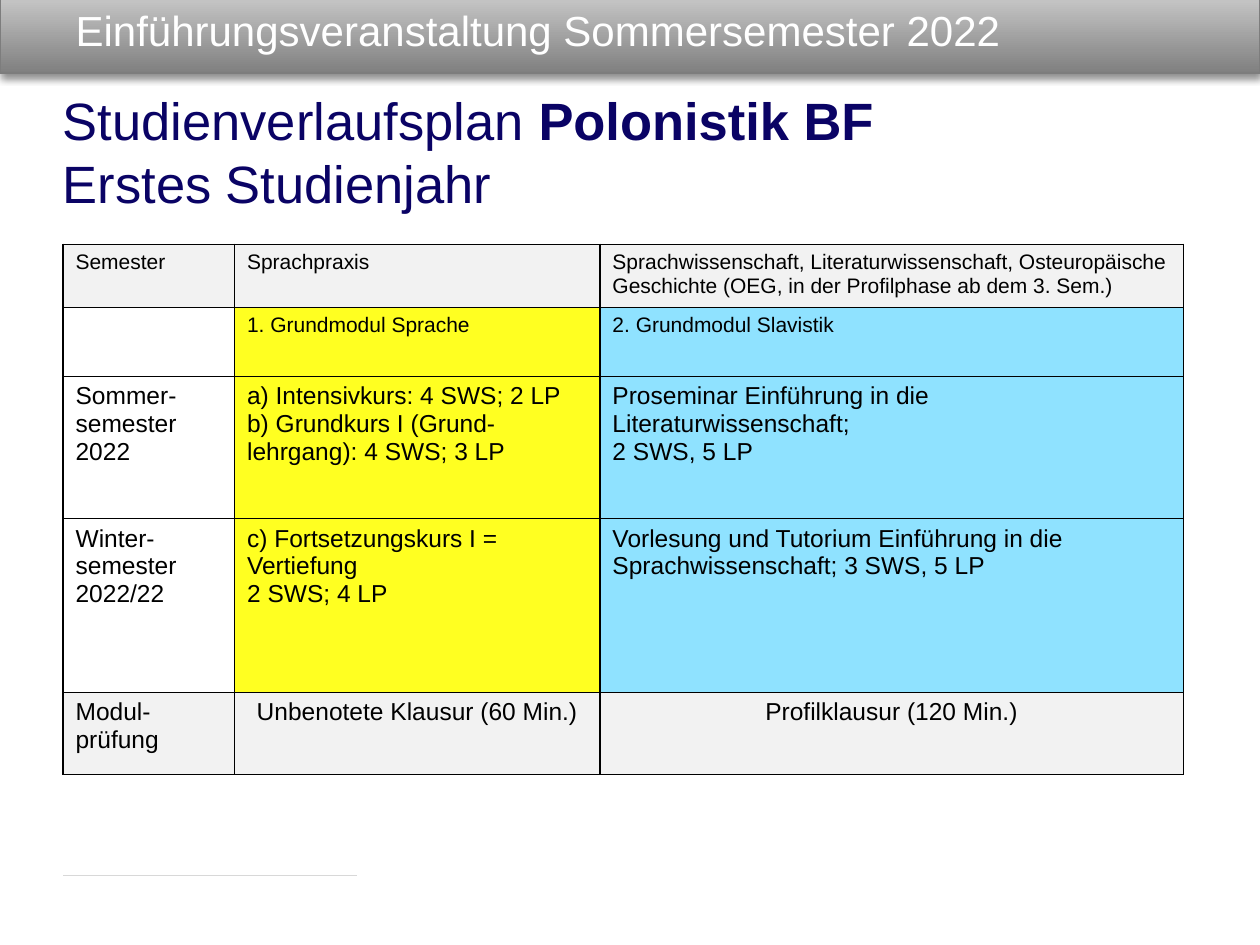
from lxml import etree
from pptx import Presentation
from pptx.dml.color import RGBColor
from pptx.enum.shapes import MSO_CONNECTOR as Connector, MSO_SHAPE as Shape
from pptx.enum.text import MSO_ANCHOR as Anchor, PP_ALIGN as Align
from pptx.oxml import parse_xml
from pptx.oxml.ns import nsdecls, qn
from pptx.util import Pt

BLACK = RGBColor(0x00, 0x00, 0x00)
WHITE = RGBColor(0xFF, 0xFF, 0xFF)
NAVY = RGBColor(0x0A, 0x03, 0x65)
DARK_GREY = RGBColor(0x80, 0x80, 0x80)
SILVER = RGBColor(0xCD, 0xCD, 0xCD)
EDGE_GREY = RGBColor(0x7D, 0x7D, 0x7D)
RULE_GREY = RGBColor(0xD8, 0xD8, 0xD8)
PALE_GREY = RGBColor(0xF2, 0xF2, 0xF2)
YELLOW = RGBColor(0xFF, 0xFF, 0x21)
SKY_BLUE = RGBColor(0x8F, 0xE2, 0xFF)


def set_font(font, color, **formats):
    font.color.rgb = color
    for name, value in {"name": "Arial", **formats}.items():
        setattr(font, name, value)


def add_borders(cell):
    properties = cell._tc.get_or_add_tcPr()
    for side in ("lnL", "lnR", "lnT", "lnB"):
        properties.append(parse_xml(
            f'<a:{side} {nsdecls("a")} w="{Pt(1)}"><a:solidFill>'
            f'<a:srgbClr val="{BLACK}"/></a:solidFill></a:{side}>'))


presentation = Presentation()
presentation.slide_width, presentation.slide_height = Pt(720), Pt(540)
slide = presentation.slides.add_slide(presentation.slide_layouts[5])

# Header bar with its title
title = slide.shapes.title
bar = slide.shapes.add_shape(Shape.RECTANGLE, Pt(0), Pt(-5.8), Pt(720), Pt(47.5))
title.element.addprevious(bar.element)
bar.fill.gradient()
bar.fill.gradient_angle = 90
for stop, position, color in zip(bar.fill.gradient_stops, (0, 1), (DARK_GREY, SILVER)):
    stop.position = position
    stop.color.rgb = color
bar.line.color.rgb = EDGE_GREY
bar.line.width = Pt(0.75)
bar.element.spPr.append(parse_xml(
    f'<a:effectLst {nsdecls("a")}>'
    f'<a:outerShdw blurRad="{Pt(4)}" dist="{Pt(3)}" dir="5400000" rotWithShape="0">'
    '<a:srgbClr val="000000"><a:alpha val="43000"/></a:srgbClr>'
    '</a:outerShdw></a:effectLst>'))

title.left, title.top, title.width, title.height = Pt(36), Pt(0), Pt(667.4), Pt(33.8)
title.text_frame.text = "Einführungsveranstaltung Sommersemester 2022"
title.text_frame.vertical_anchor = Anchor.MIDDLE
title_paragraph = title.text_frame.paragraphs[0]
title_paragraph.alignment = Align.LEFT
set_font(title_paragraph.runs[0].font, WHITE, size=Pt(24))

# Footer rule
rule = slide.shapes.add_connector(Connector.STRAIGHT, Pt(36), Pt(500.4), Pt(203.8), Pt(500.4))
rule.line.color.rgb = RULE_GREY
rule.line.width = Pt(0.75)
etree.SubElement(rule.element.spPr, qn("a:effectLst"))

# Heading
heading = slide.shapes.add_textbox(Pt(28.8), Pt(46.8), Pt(647.3), Pt(79.2))
heading.text_frame.word_wrap = True
paragraph = heading.text_frame.paragraphs[0]
paragraph.line_spacing = Pt(36)
for text, bold in (("Studienverlaufsplan ", False), ("Polonistik BF", True),
                   ("Erstes Studienjahr", False)):
    if text.startswith("Erstes"):
        paragraph.add_line_break()
    run = paragraph.add_run()
    run.text = text
    set_font(run.font, NAVY, size=Pt(30), bold=bold)

# Study plan: height, text size and cell texts of each row
plan_rows = [
    (36, 12, ["Semester", "Sprachpraxis",
              "Sprachwissenschaft, Literaturwissenschaft, Osteuropäische "
              "Geschichte (OEG, in der Profilphase ab dem 3. Sem.)"]),
    (39.4, 12, ["", "1. Grundmodul Sprache", "2. Grundmodul Slavistik"]),
    (81.2, 14, ["Sommer-semester 2022",
                "a) Intensivkurs: 4 SWS; 2 LP\nb) Grundkurs I (Grund-lehrgang): 4 SWS; 3 LP",
                "Proseminar Einführung in die Literaturwissenschaft;\n2 SWS, 5 LP"]),
    (99.4, 14, ["Winter-semester 2022/22",
                "c) Fortsetzungskurs I = Vertiefung\n2 SWS; 4 LP",
                "Vorlesung und Tutorium Einführung in die\nSprachwissenschaft; 3 SWS, 5 LP"]),
    (46.8, 14, ["Modul-prüfung", "Unbenotete Klausur (60 Min.)", "Profilklausur (120 Min.)"]),
]
column_widths = (98, 208.8, 333.4)
column_fills = (None, YELLOW, SKY_BLUE)
last_row = len(plan_rows) - 1

plan = slide.shapes.add_table(len(plan_rows), len(column_widths), Pt(36), Pt(139.7),
                              Pt(sum(column_widths)),
                              Pt(sum(row[0] for row in plan_rows))).table
plan.first_row = plan.horz_banding = False
for column, width in zip(plan.columns, column_widths):
    column.width = Pt(width)

for row_index, (height, size, texts) in enumerate(plan_rows):
    plan.rows[row_index].height = Pt(height)
    for column_index, text in enumerate(texts):
        cell = plan.cell(row_index, column_index)
        cell.text = text
        add_borders(cell)
        fill_color = PALE_GREY if row_index in (0, last_row) else column_fills[column_index]
        if fill_color is None:
            cell.fill.background()
        else:
            cell.fill.solid()
            cell.fill.fore_color.rgb = fill_color
        for paragraph in cell.text_frame.paragraphs:
            if row_index == last_row and column_index > 0:
                paragraph.alignment = Align.CENTER
            set_font(paragraph.font, BLACK, size=Pt(size))

presentation.save("out.pptx")
